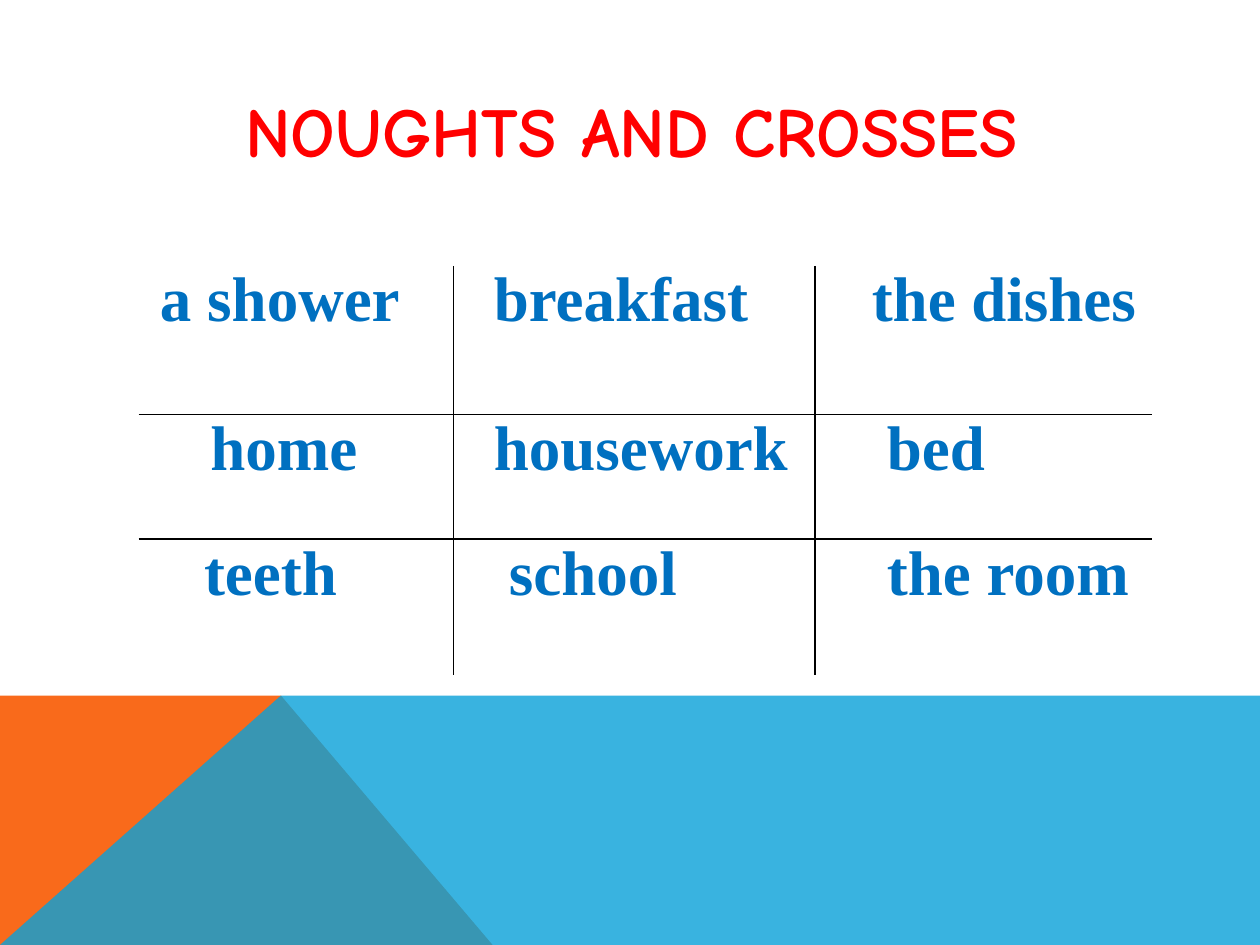
import dataclasses

import lxml.etree
import pptx
import pptx.dml.color
import pptx.enum.text
import pptx.oxml.ns
import pptx.util

Inches = pptx.util.Inches
qn = pptx.oxml.ns.qn


@dataclasses.dataclass(frozen=True)
class Theme:
    title_font: str = "Comic Neue"
    word_font: str = "Times New Roman"
    title_size: int = 40
    word_size: int = 36
    title_color: str = "FF0000"
    word_color: str = "0070C0"
    grid_color: str = "000000"
    orange: str = "F96A1B"
    blue: str = "08A1D9"


THEME = Theme()

# Floor of the slide: the ridge is where the two colours meet
FLOOR_TOP, FLOOR_BOTTOM = 5.52, 7.5
RIDGE = (2.23, FLOOR_TOP)

# Game grid: the first three columns make up the left field
COLUMN_WIDTHS = (0.1, 0.35, 2.05, 2.87, 2.67)
ROW_HEIGHTS = (1.18, 0.99, 1.08)
DIVIDERS = (3, 4)  # columns with a line on their left

# Each entry: text, first column, last column, left indent in inches
WORDS = (
    (("", 0, 0, 0), ("a shower", 1, 2, 0.07),
     ("breakfast", 3, 3, 0.32), ("the dishes", 4, 4, 0.45)),
    (("home", 0, 2, 0.57),
     ("housework", 3, 3, 0.32), ("bed", 4, 4, 0.57)),
    (("", 0, 1, 0), ("teeth", 2, 2, 0.07),
     ("school", 3, 3, 0.44), ("the room", 4, 4, 0.57)),
)


def rgb(color):
    return pptx.dml.color.RGBColor.from_string(color)


def write_text(frame, text, *, font, size, color, align):
    para = frame.paragraphs[0]
    para.alignment = align
    span = para.add_run()
    span.text = text
    span.font.name = font
    span.font.size = pptx.util.Pt(size)
    span.font.bold = True
    span.font.color.rgb = rgb(color)


def add_polygon(slide, points, color, opacity=100):
    corners = [(Inches(x), Inches(y)) for x, y in points]
    builder = slide.shapes.build_freeform(*corners[0])
    builder.add_line_segments(corners[1:], close=True)
    shape = builder.convert_to_shape()
    shape.shadow.inherit = False
    shape.line.fill.background()
    shape.fill.solid()
    shape.fill.fore_color.rgb = rgb(color)
    if opacity < 100:
        tint = shape.fill._xPr.find(qn("a:solidFill"))[0]
        lxml.etree.SubElement(tint, qn("a:alpha"), val=str(opacity * 1000))


def set_borders(cell, visible):
    properties = cell._tc.get_or_add_tcPr()
    for side in "LRTB":
        line = lxml.etree.SubElement(
            properties, qn(f"a:ln{side}"), w=str(pptx.util.Pt(1)))
        if side in visible:
            fill = lxml.etree.SubElement(line, qn("a:solidFill"))
            lxml.etree.SubElement(fill, qn("a:srgbClr"), val=THEME.grid_color)
        else:
            lxml.etree.SubElement(line, qn("a:noFill"))


def inner_sides(row, first, last):
    return (("L" if first in DIVIDERS else "")
            + ("R" if last + 1 in DIVIDERS else "")
            + ("T" if row > 0 else "")
            + ("B" if row < len(ROW_HEIGHTS) - 1 else ""))


def add_title(slide, text):
    title = slide.shapes.title
    title.left, title.top = Inches(0.9), Inches(0.38)
    title.width, title.height = Inches(8.22), Inches(1.3)
    title.text_frame.vertical_anchor = pptx.enum.text.MSO_ANCHOR.MIDDLE
    write_text(title.text_frame, text, font=THEME.title_font,
               size=THEME.title_size, color=THEME.title_color,
               align=pptx.enum.text.PP_ALIGN.CENTER)


def fill_field(table, row, text, first, last, indent):
    for column in range(first, last + 1):
        cell = table.cell(row, column)
        set_borders(cell, inner_sides(row, column if column > first else first,
                                      last))
        cell.fill.background()
    field = table.cell(row, first)
    if last > first:
        field.merge(table.cell(row, last))
    field.margin_left = Inches(indent)
    field.margin_right = Inches(0.05 if text else 0)
    field.margin_top = field.margin_bottom = 0
    if text:
        write_text(field.text_frame, text, font=THEME.word_font,
                   size=THEME.word_size, color=THEME.word_color,
                   align=pptx.enum.text.PP_ALIGN.JUSTIFY)


def add_game_grid(slide):
    table = slide.shapes.add_table(
        len(ROW_HEIGHTS), len(COLUMN_WIDTHS), Inches(1.1), Inches(2.11),
        Inches(sum(COLUMN_WIDTHS)), Inches(sum(ROW_HEIGHTS))).table
    table.first_row = table.horz_banding = False
    for column, width in zip(table.columns, COLUMN_WIDTHS):
        column.width = Inches(width)
    for row, height in zip(table.rows, ROW_HEIGHTS):
        row.height = Inches(height)
    for row, fields in enumerate(WORDS):
        for field in fields:
            fill_field(table, row, *field)


def main():
    deck = pptx.Presentation()
    deck.slide_width, deck.slide_height = Inches(10), Inches(7.5)
    slide = deck.slides.add_slide(deck.slide_layouts[5])

    # Coloured floor
    add_polygon(slide, [(0, FLOOR_BOTTOM), (0, FLOOR_TOP), RIDGE,
                        (3.91, FLOOR_BOTTOM)], THEME.orange)
    add_polygon(slide, [(0, FLOOR_BOTTOM), RIDGE, (10, FLOOR_TOP),
                        (10, FLOOR_BOTTOM)], THEME.blue, opacity=80)

    # Title and game
    add_title(slide, "NOUGHTS AND CROSSES")
    add_game_grid(slide)
    deck.save("out.pptx")


if __name__ == "__main__":
    main()
